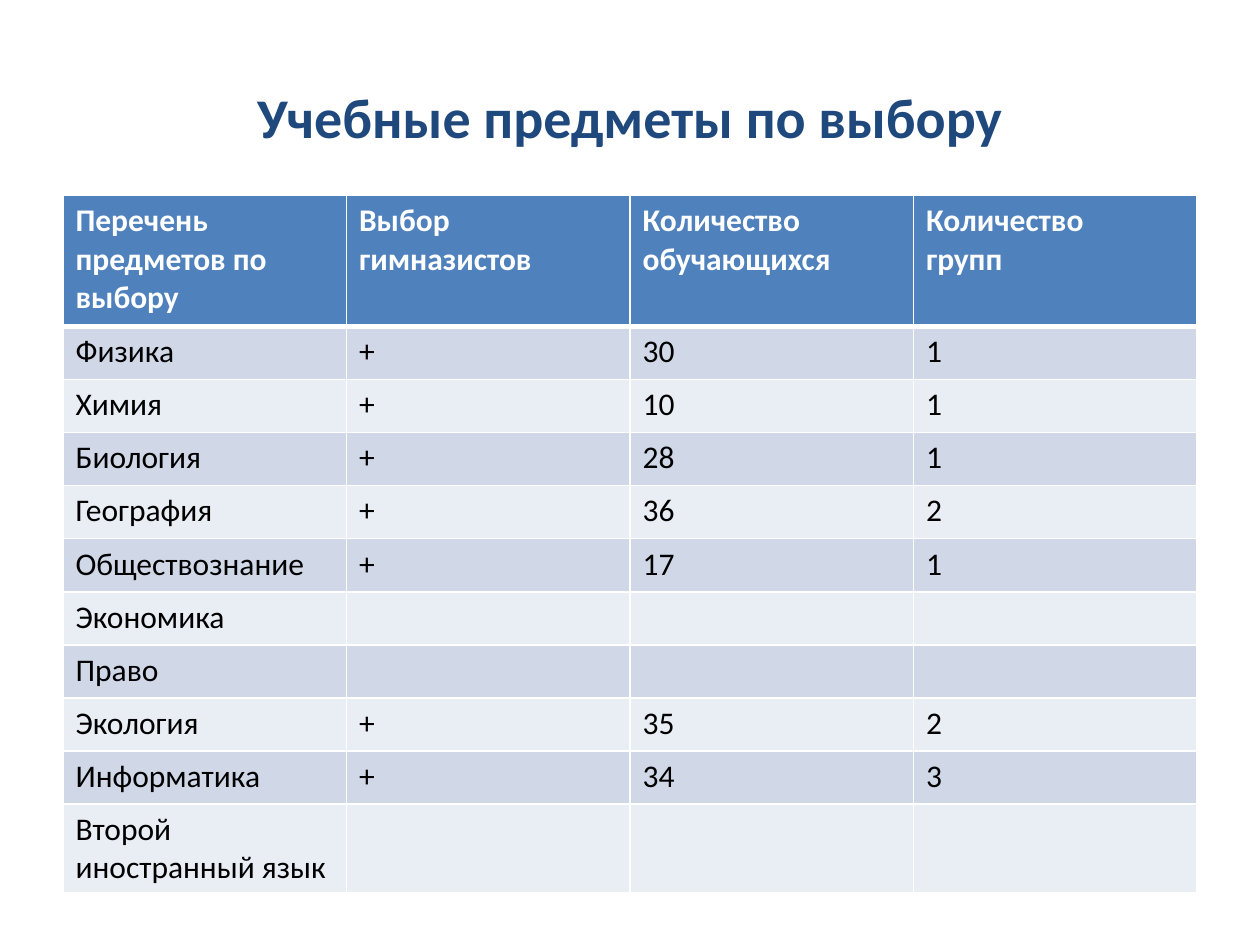
"""Build a slide with a table of elective school subjects."""
from dataclasses import dataclass

from lxml.etree import SubElement
from pptx import Presentation
from pptx.dml.color import RGBColor as Color
from pptx.enum.text import MSO_ANCHOR as Anchor, PP_ALIGN as Align
from pptx.oxml.ns import qn
from pptx.util import Cm, Pt


@dataclass(frozen=True)
class Theme:
    font: str = "Calibri"
    title_size: int = 32
    body_size: int = 18
    title: str = "1F497D"
    header: str = "4F81BD"
    bands: tuple = ("D0D8E8", "E9EDF4")
    light: str = "FFFFFF"
    dark: str = "000000"
    thin: int = 1
    thick: int = 3


@dataclass(frozen=True)
class Subject:
    name: str
    chosen: str = ""
    students: str = ""
    groups: str = ""

    def values(self) -> tuple:
        return self.name, self.chosen, self.students, self.groups


THEME = Theme()
HEADINGS = Subject("Перечень предметов по выбору", "Выбор гимназистов",
                   "Количество обучающихся", "Количество\nгрупп")
SUBJECTS = [
    Subject("Физика", "+", "30", "1"),
    Subject("Химия", "+", "10", "1"),
    Subject("Биология", "+", "28", "1"),
    Subject("География", "+", "36", "2"),
    Subject("Обществознание", "+", "17", "1"),
    Subject("Экономика"),
    Subject("Право"),
    Subject("Экология", "+", "35", "2"),
    Subject("Информатика", "+", "34", "3"),
    Subject("Второй иностранный язык"),
]
LEFT, WIDTH = Cm(1.27), Cm(22.86)
TITLE_TOP, TITLE_HEIGHT = Cm(0.76), Cm(3.18)
TABLE_TOP, TABLE_HEIGHT = Cm(3.94), Cm(14.07)
HEADER_HEIGHT, ROW_HEIGHT = Cm(2.64), Cm(1.07)


def write(frame, text: str, *, size: int, color: str, bold: bool = False,
          align: Align = Align.LEFT) -> None:
    frame.word_wrap = True
    frame.text = text
    for para in frame.paragraphs:
        para.alignment = align
        para.font.size = Pt(size)
        for span in para.runs:
            span.font.name = THEME.font
            span.font.size = Pt(size)
            span.font.bold = bold
            span.font.color.rgb = Color.from_string(color)


def set_borders(cell, *, top: int, bottom: int) -> None:
    properties = cell._tc.get_or_add_tcPr()
    widths = {"lnL": THEME.thin, "lnR": THEME.thin, "lnT": top, "lnB": bottom}
    for side, width in widths.items():
        line = SubElement(properties, qn(f"a:{side}"), w=str(Pt(width)))
        fill = SubElement(line, qn("a:solidFill"))
        SubElement(fill, qn("a:srgbClr"), val=THEME.light)


def fill_row(table, index: int, subject: Subject) -> None:
    is_header = index == 0
    background = THEME.header if is_header else THEME.bands[(index - 1) % 2]
    for cell, text in zip(table.rows[index].cells, subject.values()):
        write(cell.text_frame, text, size=THEME.body_size, bold=is_header,
              color=THEME.light if is_header else THEME.dark)
        set_borders(cell, top=THEME.thick if index == 1 else THEME.thin,
                    bottom=THEME.thick if is_header else THEME.thin)
        cell.fill.solid()
        cell.fill.fore_color.rgb = Color.from_string(background)


def add_title(page, text: str) -> None:
    box = page.shapes.add_textbox(LEFT, TITLE_TOP, WIDTH, TITLE_HEIGHT)
    box.text_frame.vertical_anchor = Anchor.MIDDLE
    write(box.text_frame, text, size=THEME.title_size, color=THEME.title,
          bold=True, align=Align.CENTER)


def add_subject_table(page, subjects: list[Subject]) -> None:
    rows = [HEADINGS, *subjects]
    frame = page.shapes.add_table(len(rows), len(HEADINGS.values()),
                                  LEFT, TABLE_TOP, WIDTH, TABLE_HEIGHT)
    for index, subject in enumerate(rows):
        frame.table.rows[index].height = ROW_HEIGHT if index else HEADER_HEIGHT
        fill_row(frame.table, index, subject)
    frame.height = TABLE_HEIGHT


def main() -> None:
    deck = Presentation()
    deck.slide_width, deck.slide_height = Cm(25.4), Cm(19.05)
    page = deck.slides.add_slide(deck.slide_layouts[6])
    add_title(page, "Учебные предметы по выбору")
    add_subject_table(page, SUBJECTS)
    deck.save("out.pptx")


if __name__ == "__main__":
    main()
